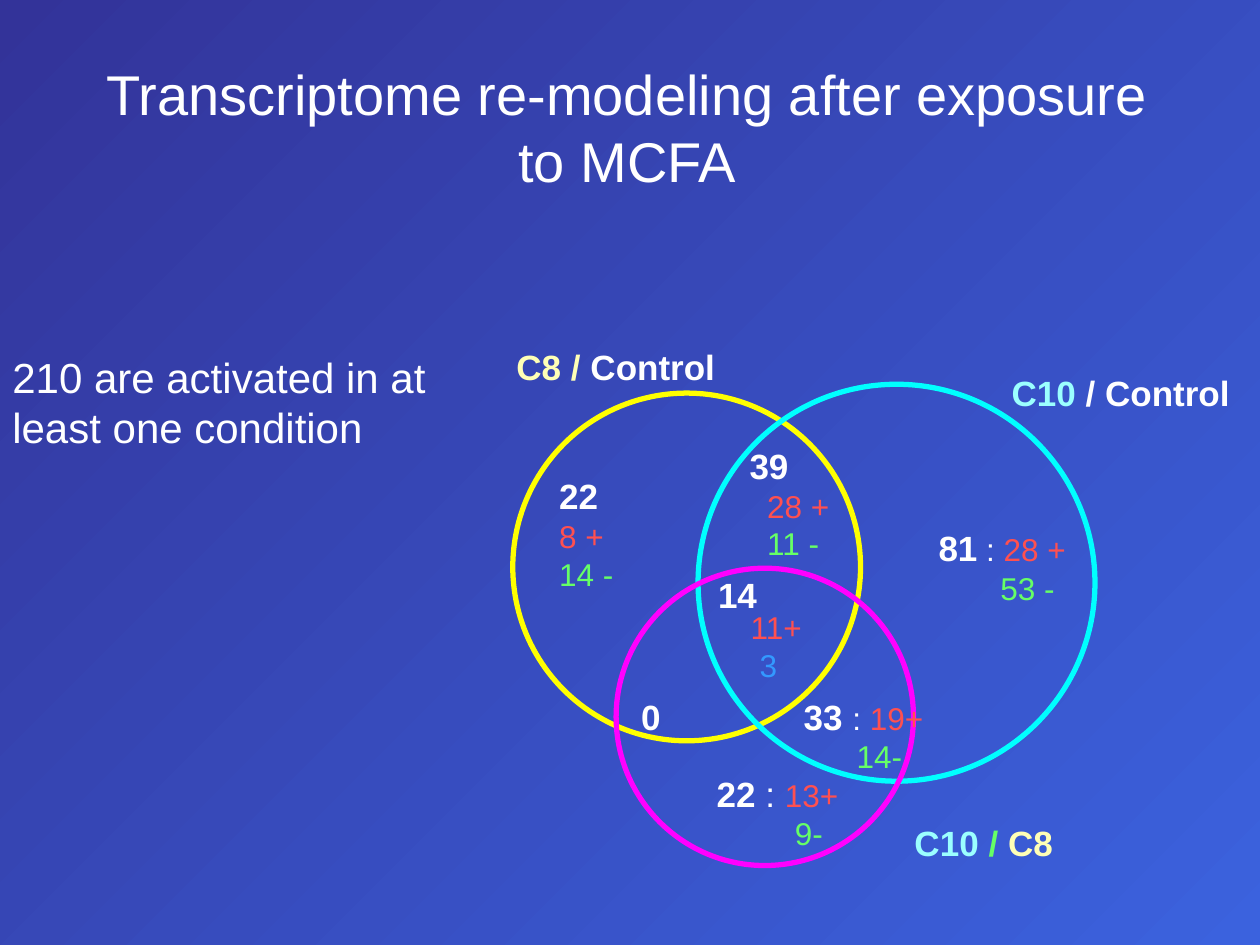
from pptx import Presentation
from pptx.dml.color import RGBColor
from pptx.enum.shapes import MSO_SHAPE
from pptx.enum.text import MSO_ANCHOR, MSO_AUTO_SIZE, PP_ALIGN
from pptx.util import Inches, Pt

WHITE, RED, GREEN, BLUE = "FFFFFF", "FF5050", "66FF66", "3399FF"
PALE_YELLOW, PALE_CYAN = "FFFFB6", "9BFFFF"
BACKGROUND = ["333399", "3B62DE"]
TITLE = "Transcriptome re-modeling after exposure to MCFA"
SUMMARY = "210 are activated in at least one condition"

# left, top, diameter, colour
CIRCLES = [
    (4.07, 3.12, 2.76, "FFFF00"),
    (5.54, 3.05, 3.15, "00FFFF"),
    (4.89, 4.51, 2.36, "FF00FF"),
]


def bold(text, color=WHITE):
    """Describe a bold 20 point span."""
    return text, 20, True, color


def plain(text, color=WHITE, size=18):
    """Describe a regular span."""
    return text, size, False, color


# left, top, width, height, lines of (indent, spans)
LABELS = [
    (5.6, 4.5, 0.51, 0.43, [(0, [bold("14")])]),
    (4, 2.69, 1.78, 0.43, [(0, [bold("C8 / ", PALE_YELLOW), bold("Control")])]),
    (7.93, 2.9, 1.95, 0.44, [(0, [bold("C10 ", PALE_CYAN), bold("/ Control")])]),
    (5.86, 4.78, 0.62, 0.7, [(0, [plain("11+", RED)]), (0.07, [plain("3", BLUE)])]),
    (5.85, 3.48, 0.85, 1.05, [
        (0, [bold("39")]), (0.14, [plain("28 +", RED)]), (0.14, [plain("11 -", GREEN)])]),
    (7.16, 6.47, 1.3, 0.43, [
        (0, [bold("C10 ", PALE_CYAN), bold("/ ", GREEN), bold("C8", PALE_YELLOW)])]),
    (4.34, 3.72, 0.64, 1.06, [
        (0, [bold("22")]), (0, [plain("8 +", RED)]), (0, [plain("14 -", GREEN)])]),
    (7.35, 4.13, 1.21, 0.73, [
        (0, [bold("81"), plain(" : "), plain("28 +", RED)]), (0.49, [plain("53 -", GREEN)])]),
    (6.28, 5.47, 1.17, 0.74, [
        (0, [bold("33 "), plain(": "), plain("19+", RED)]), (0.42, [plain("14-", GREEN)])]),
    (4.99, 5.47, 0.36, 0.43, [(0, [bold("0")])]),
    (5.59, 6.08, 1.23, 0.73, [
        (0, [bold("22"), plain(" : ", size=20), plain("13+", RED)]),
        (0.62, [plain("9-", GREEN)])]),
]


def rgb(color):
    """Turn a hex string into a colour."""
    return RGBColor.from_string(color)


def set_font(font, size, color, is_bold=False):
    """Apply the slide's typeface with a size, colour and weight."""
    font.name, font.size, font.bold = "Arial", Pt(size), is_bold
    font.color.rgb = rgb(color)


def add_background(page):
    """Fill the page with the diagonal gradient."""
    fill = page.background.fill
    fill.gradient()
    fill.gradient_angle = 315
    for stop, position, color in zip(fill.gradient_stops, (0, 1), BACKGROUND):
        stop.position = position
        stop.color.rgb = rgb(color)


def add_title(page):
    """Place the title."""
    title = page.shapes.title
    title.left, title.top, title.width, title.height = map(Inches, (0.73, 0.38, 8.5, 1.25))
    frame = title.text_frame
    frame.text = TITLE
    frame.auto_size = MSO_AUTO_SIZE.NONE
    frame.vertical_anchor = MSO_ANCHOR.MIDDLE
    para = frame.paragraphs[0]
    para.alignment = PP_ALIGN.CENTER
    set_font(para.font, 32, WHITE)


def add_summary(page):
    """Place the sentence beside the diagram."""
    box = page.shapes.add_textbox(*map(Inches, (0, 2.74, 3.74, 1.31)))
    box.text_frame.word_wrap = True
    para = box.text_frame.paragraphs[0]
    para.text = SUMMARY
    set_font(para.font, 24, WHITE)


def add_circle(page, left, top, diameter, color):
    """Draw one outlined set of the Venn diagram."""
    circle = page.shapes.add_shape(
        MSO_SHAPE.OVAL, *map(Inches, (left, top, diameter, diameter)))
    circle.shadow.inherit = False
    circle.fill.background()
    circle.line.color.rgb = rgb(color)
    circle.line.width = Pt(3)


def add_label(page, left, top, width, height, lines):
    """Write one label, line by line."""
    box = page.shapes.add_textbox(*map(Inches, (left, top, width, height)))
    frame = box.text_frame
    frame.word_wrap = False
    for index, (indent, spans) in enumerate(lines):
        para = frame.add_paragraph() if index else frame.paragraphs[0]
        if indent:
            para._p.get_or_add_pPr().set("marL", str(Inches(indent)))
        for text, size, is_bold, color in spans:
            span = para.add_run()
            span.text = text
            set_font(span.font, size, color, is_bold)


def main():
    """Build and save the slide."""
    deck = Presentation()
    deck.slide_width, deck.slide_height = Inches(10), Inches(7.5)
    page = deck.slides.add_slide(deck.slide_layouts[5])
    add_background(page)
    add_title(page)
    add_summary(page)
    for circle in CIRCLES:
        add_circle(page, *circle)
    for label in LABELS:
        add_label(page, *label)
    deck.save("out.pptx")


if __name__ == "__main__":
    main()
